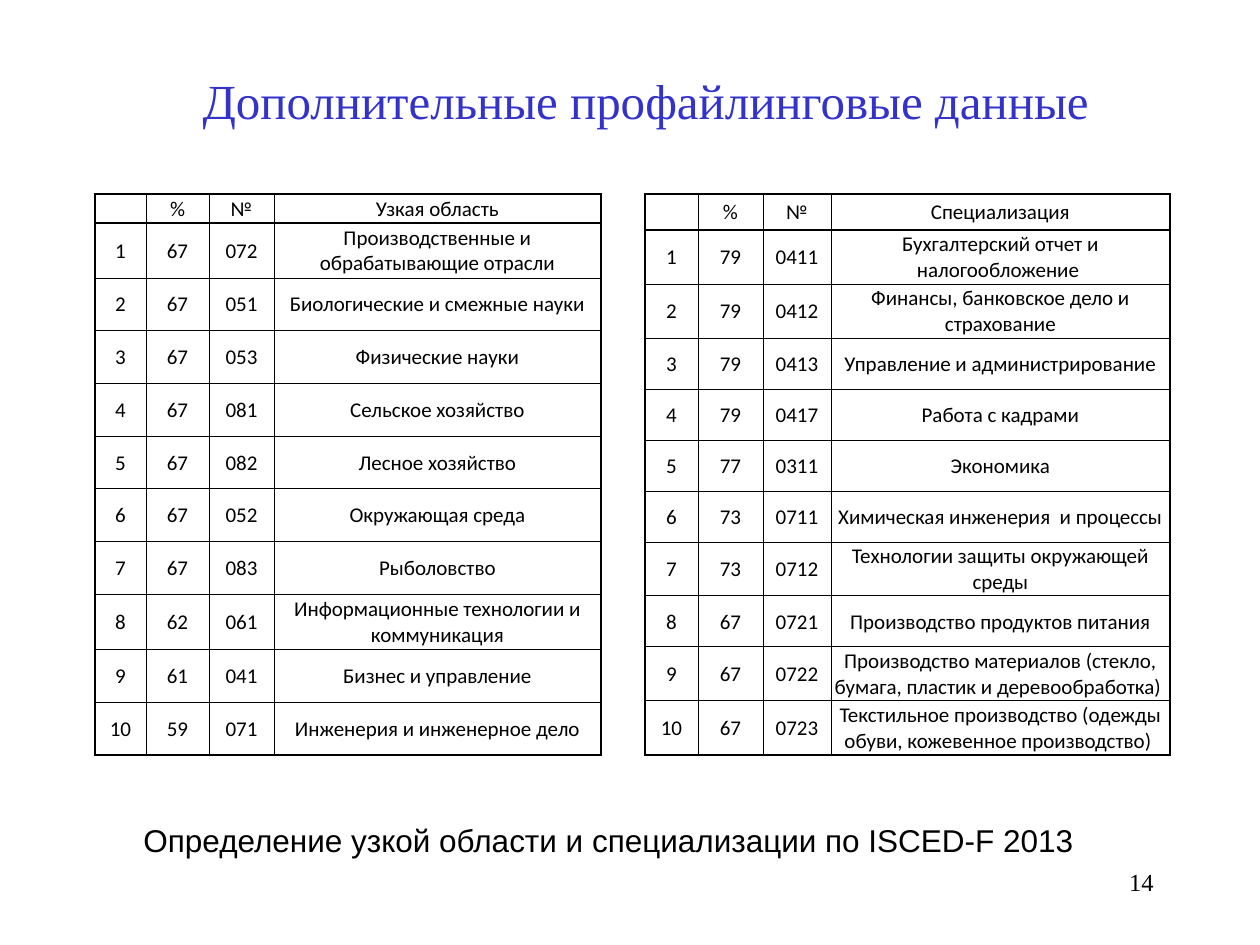
from lxml.etree import SubElement
from pptx import Presentation
from pptx.dml.color import RGBColor
from pptx.enum.text import MSO_ANCHOR as Anchor, PP_ALIGN as Align
from pptx.oxml.ns import qn
from pptx.util import Pt

PX = 914400 / 126
BLACK = RGBColor(0x00, 0x00, 0x00)
TITLE_BLUE = RGBColor(0x33, 0x33, 0xCC)

TITLE_FONT = {"name": "Times New Roman", "size": Pt(28)}
CAPTION_FONT = {"name": "Arial", "size": Pt(18)}
NUMBER_FONT = {"name": "Times New Roman", "size": Pt(14)}
CELL_FONT = {"name": "Calibri", "size": Pt(12)}
THIN, THICK = Pt(0.5), Pt(1)

NARROW_FIELDS = [
    ("", "%", "№", "Узкая область"),
    ("1", "67", "072", "Производственные и обрабатывающие отрасли"),
    ("2", "67", "051", "Биологические и смежные науки"),
    ("3", "67", "053", "Физические науки"),
    ("4", "67", "081", "Сельское хозяйство"),
    ("5", "67", "082", "Лесное хозяйство"),
    ("6", "67", "052", "Окружающая среда"),
    ("7", "67", "083", "Рыболовство"),
    ("8", "62", "061", "Информационные технологии и коммуникация"),
    ("9", "61", "041", "Бизнес и управление"),
    ("10", "59", "071", "Инженерия и инженерное дело"),
]
SPECIALISATIONS = [
    ("", "%", "№", "Специализация"),
    ("1", "79", "0411", "Бухгалтерский отчет и налогообложение "),
    ("2", "79", "0412", "Финансы, банковское дело и страхование"),
    ("3", "79", "0413", "Управление и администрирование"),
    ("4", "79", "0417", "Работа с кадрами"),
    ("5", "77", "0311", "Экономика"),
    ("6", "73", "0711", "Химическая инженерия  и процессы"),
    ("7", "73", "0712", "Технологии защиты окружающей среды"),
    ("8", "67", "0721", "Производство продуктов питания"),
    ("9", "67", "0722", "Производство материалов (стекло, бумага, пластик и деревообработка) "),
    ("10", "67", "0723", "Текстильное производство (одежды обуви, кожевенное производство) "),
]


def px(value):
    return round(value * PX)


def write(frame, text, font, color, align):
    paragraph = frame.paragraphs[0]
    paragraph.alignment = align
    if not text:  # an empty cell still needs its line height
        paragraph._p.get_or_add_endParaRPr().set("sz", str(font["size"].centipoints))
        return
    run = paragraph.add_run()
    run.text = text
    for key, value in font.items():
        setattr(run.font, key, value)
    run.font.color.rgb = color


def add_title(slide, box, text):
    title = slide.shapes.title
    title.left, title.top, title.width, title.height = map(px, box)
    title.text_frame.vertical_anchor = Anchor.MIDDLE
    write(title.text_frame, text, TITLE_FONT, TITLE_BLUE, Align.CENTER)


def add_label(slide, box, text, font, align, wrap):
    frame = slide.shapes.add_textbox(*map(px, box)).text_frame
    frame.word_wrap = wrap
    write(frame, text, font, BLACK, align)


def set_borders(cell, widths):
    props = cell._tc.get_or_add_tcPr()
    for side, width in widths.items():
        line = SubElement(props, qn(f"a:ln{side}"), w=str(width))
        fill = SubElement(line, qn("a:solidFill"))
        SubElement(fill, qn("a:srgbClr"), val=str(BLACK))


def add_ranking(slide, box, rows, columns, header, tall, tall_rows):
    """Two-line rows get the tall height; the other rows share what is left."""
    last_row, last_col = len(rows) - 1, len(columns) - 1
    plain = (box[3] - header - tall * len(tall_rows)) / (last_row - len(tall_rows))
    table = slide.shapes.add_table(len(rows), len(columns), *map(px, box)).table
    table.first_row = table.horz_banding = False
    for column, width in zip(table.columns, columns):
        column.width = px(width)
    for r, values in enumerate(rows):
        table.rows[r].height = px(header if r == 0 else tall if r in tall_rows else plain)
        for c, text in enumerate(values):
            cell = table.cell(r, c)
            cell.vertical_anchor = Anchor.MIDDLE
            cell.margin_left = cell.margin_right = cell.margin_top = px(1)
            cell.margin_bottom = 0
            write(cell.text_frame, text, CELL_FONT, BLACK, Align.CENTER)
            # Outer frame and header rule are thick
            set_borders(cell, {
                "L": THICK if c == 0 else THIN,
                "R": THICK if c == last_col else THIN,
                "T": THICK if r <= 1 else THIN,
                "B": THICK if r in (0, last_row) else THIN,
            })
            cell.fill.background()


def main():
    deck = Presentation()
    deck.slide_width, deck.slide_height = px(1260), px(945)
    slide = deck.slides.add_slide(deck.slide_layouts[5])

    add_title(slide, (71, 64, 1149, 72), "Дополнительные профайлинговые данные")
    add_label(slide, (131, 815, 964, 50),
              "Определение узкой области и специализации по ISCED-F 2013",
              CAPTION_FONT, Align.LEFT, False)

    # Two rankings side by side
    add_ranking(slide, (95, 194, 506, 561), NARROW_FIELDS,
                (51, 63, 65, 327), 29, 55, {1, 8})
    add_ranking(slide, (645, 194, 525, 561), SPECIALISATIONS,
                (53, 65, 68, 339), 36, 54, {1, 2, 7, 9, 10})

    # Slide number
    add_label(slide, (1003, 861, 163, 63), "14", NUMBER_FONT, Align.RIGHT, True)
    deck.save("out.pptx")


if __name__ == "__main__":
    main()
